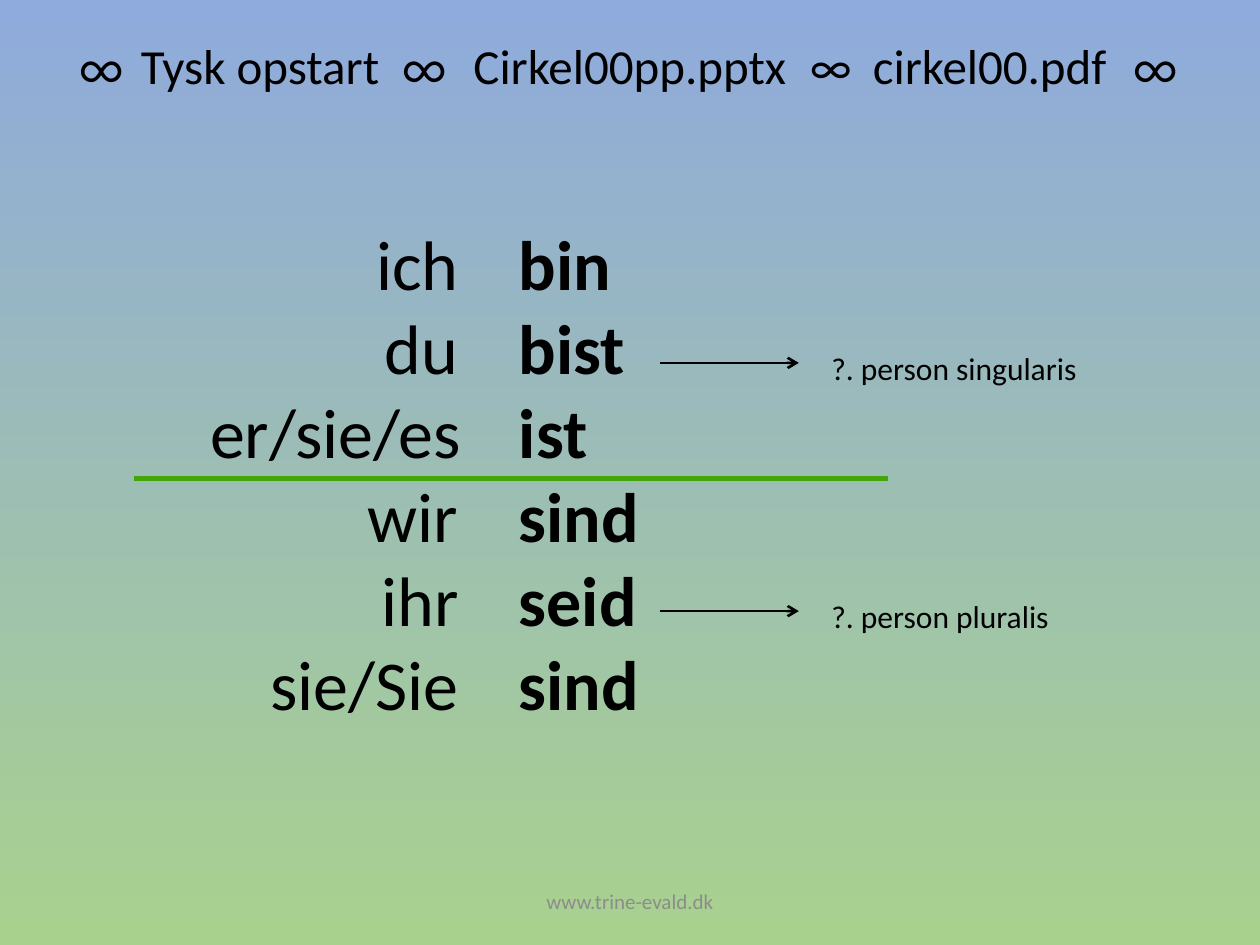
from lxml import etree
from pptx import Presentation
from pptx.dml.color import RGBColor
from pptx.enum.shapes import MSO_CONNECTOR
from pptx.enum.text import MSO_ANCHOR, PP_ALIGN
from pptx.oxml.ns import qn
from pptx.util import Inches, Pt

BLACK = RGBColor(0x00, 0x00, 0x00)
GREY = RGBColor(0x8C, 0x8C, 0x8C)
GREEN = RGBColor(0x42, 0xA6, 0x0A)
SKY = RGBColor(0x8F, 0xAA, 0xDC)
MEADOW = RGBColor(0xA9, 0xD1, 0x8E)
BODY_FONT = "Calibri"
SYMBOL_FONT = "TeX Gyre Adventor"

TITLE_PARTS = [
    ("∞", SYMBOL_FONT, 0.52),
    ("Tysk opstart", BODY_FONT, 1.02),
    ("∞", SYMBOL_FONT, 3.08),
    ("Cirkel00pp.pptx", BODY_FONT, 3.66),
    ("∞", BODY_FONT, 6.33),
    ("cirkel00.pdf", BODY_FONT, 6.83),
    ("∞", SYMBOL_FONT, 8.88),
]
# The widest pronoun fills its column, so it starts at the left edge.
CONJUGATION = [
    ("\tich", "bin"),
    ("\tdu", "bist"),
    ("er/sie/es", "ist"),
    ("\twir", "sind"),
    ("\tihr", "seid"),
    ("\tsie/Sie", "sind"),
]
VERB_TABS = [(1.97, "r"), (2.45, "l")]
NOTES = [("?. person singularis", 2.88), ("?. person pluralis", 4.85)]


def paint_background(page):
    fill = page.background.fill
    fill.gradient()
    fill.gradient_angle = 270
    for stop, color, position in zip(fill.gradient_stops, (SKY, MEADOW), (0, 1)):
        stop.color.rgb = color
        stop.position = position


def add_text_box(page, left, top, width, height):
    box = page.shapes.add_textbox(
        Inches(left), Inches(top), Inches(width), Inches(height))
    box.text_frame.word_wrap = True
    return box.text_frame


def add_span(para, text, size, font=BODY_FONT, color=BLACK, bold=False):
    span = para.add_run()
    span.text = text
    span.font.size = Pt(size)
    span.font.name = font
    span.font.bold = bold
    span.font.color.rgb = color


def set_tabs(para, tabs):
    """Give the paragraph tab stops, each a position in inches and an alignment."""
    tab_list = etree.SubElement(para._p.get_or_add_pPr(), qn("a:tabLst"))
    for position, align in tabs:
        etree.SubElement(tab_list, qn("a:tab"), pos=str(Inches(position)), algn=align)


def add_line(page, left, right, y, color, width, arrow=False):
    line = page.shapes.add_connector(
        MSO_CONNECTOR.STRAIGHT, Inches(left), Inches(y), Inches(right), Inches(y))
    line.line.color.rgb = color
    line.line.width = Pt(width)
    if arrow:
        etree.SubElement(line.line._get_or_add_ln(), qn("a:tailEnd"), type="arrow")
    etree.SubElement(line._element.spPr, qn("a:effectLst"))


def add_title(page, left, top, width, height):
    para = add_text_box(page, left, top, width, height).paragraphs[0]
    set_tabs(para, [(position, "l") for _, _, position in TITLE_PARTS])
    for text, font, _ in TITLE_PARTS:
        add_span(para, "\t" + text, 28, font)


def add_conjugation(page, left, top, width, height):
    """Pronouns and verb forms, with a rule between singular and plural."""
    frame = add_text_box(page, left, top, width, height)
    for index, (pronoun, verb) in enumerate(CONJUGATION):
        para = frame.add_paragraph() if index else frame.paragraphs[0]
        set_tabs(para, VERB_TABS)
        add_span(para, pronoun + "\t", 40)
        add_span(para, verb, 40, bold=True)
    add_line(page, left - 0.51, left + width + 0.95, top + 2.1, GREEN, 3)


def add_person_note(page, text, left, y):
    """An arrow at height y that points to a note."""
    add_line(page, left, left + 1.1, y, BLACK, 1.5, arrow=True)
    frame = add_text_box(page, left + 1.26, y - 0.16, 2.83, 0.4)
    add_span(frame.paragraphs[0], text, 18)


def add_footer(page, left, top, width, height):
    frame = add_text_box(page, left, top, width, height)
    frame.vertical_anchor = MSO_ANCHOR.MIDDLE
    para = frame.paragraphs[0]
    para.alignment = PP_ALIGN.CENTER
    add_span(para, "www.trine-evald.dk", 12, color=GREY)


def main():
    deck = Presentation()
    deck.slide_width, deck.slide_height = Inches(10), Inches(7.5)
    page = deck.slides.add_slide(deck.slide_layouts[6])
    paint_background(page)
    add_conjugation(page, 1.57, 1.7, 4.53, 4.14)
    for text, y in NOTES:
        add_person_note(page, text, 5.24, y)
    add_footer(page, 3.31, 6.95, 3.38, 0.4)
    add_title(page, 0, 0.23, 10, 0.57)
    deck.save("out.pptx")


if __name__ == "__main__":
    main()
